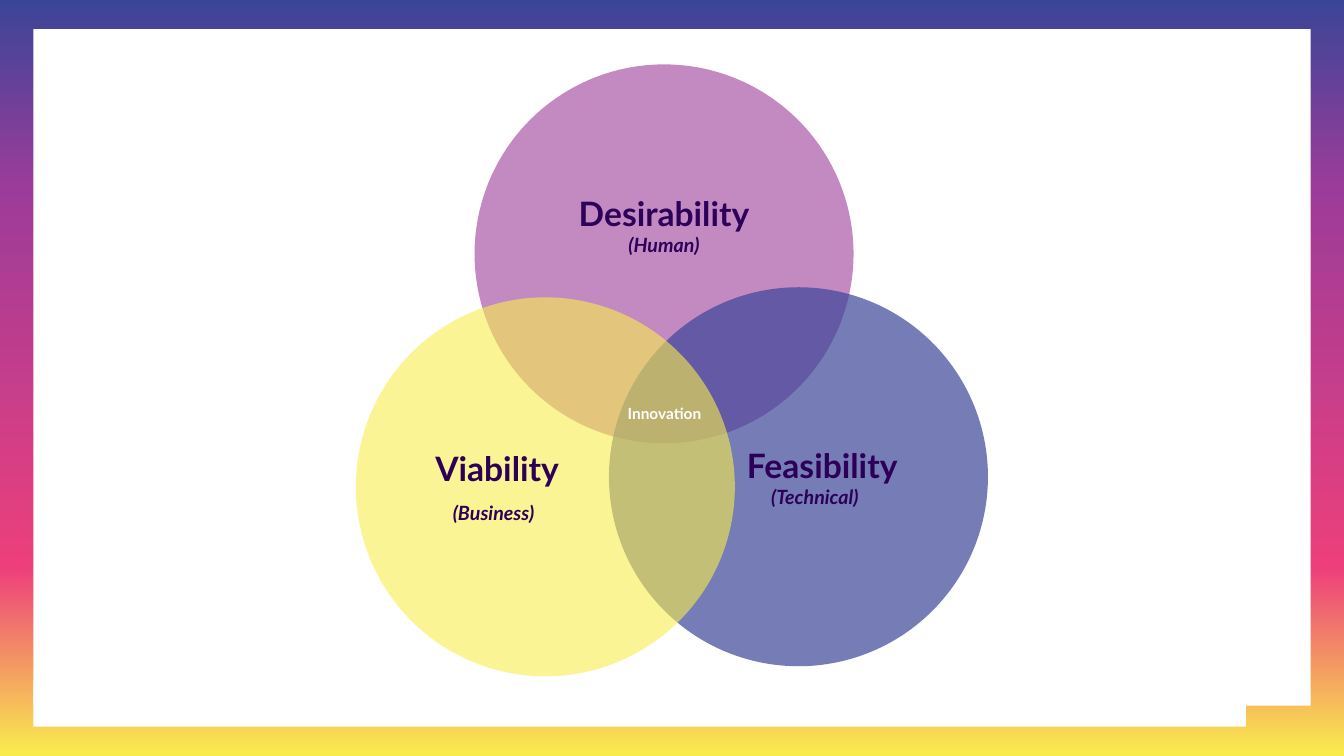
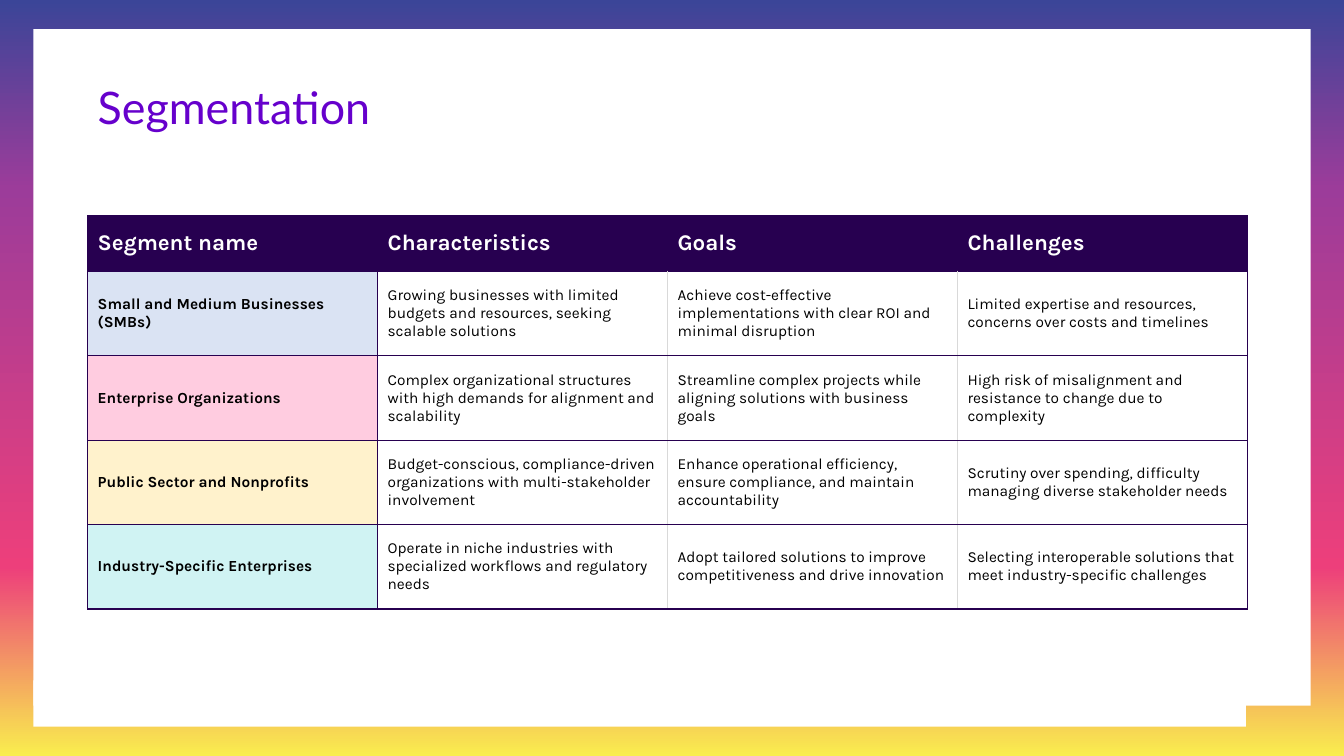
from copy import deepcopy

from lxml import etree
from pptx import Presentation
from pptx.dml.color import RGBColor
from pptx.enum import shapes, text
from pptx.oxml.ns import qn
from pptx.util import Pt

# Shared style
HEADING_FONT, TABLE_FONT = "Lato", "Karla"
WHITE, BLACK, INK = "FFFFFF", "000000", "2C0058"
BLUE, PURPLE, PINK, YELLOW = "3B4598", "9C3C9A", "ED3F7B", "F9ED4E"
TABLE_DARK, TABLE_LIGHT = "270050", "D9D9D9"
TITLE_STOPS = [(0, "6600CC"), (1, "3965B5")]
FRAME_STOPS = [(0, BLUE), (0.25, PURPLE), (0.75, PINK), (1, YELLOW)]
WIDTH, HEIGHT = 960, 540

# Circles: left, top, colour, opacity, bottom inset, alignment,
# lines of (text, size, italic, indent, exact spacing)
DIAMETER = 270.7
CENTER, LEFT = text.PP_ALIGN.CENTER, text.PP_ALIGN.LEFT
CIRCLES = [
    (339, 46, PURPLE, 60, 45, CENTER,
     [("Desirability", 24, False, 0, None), ("(Human)", 14, True, 0, None)]),
    (435, 205.2, BLUE, 70, 3.6, CENTER,
     [("Feasibility", 24, False, 34, None), ("(Technical)", 14, True, 23.5, None)]),
    (254.2, 212.4, YELLOW, 60, 3.6, LEFT,
     [("Viability", 24, False, 10, 28), ("(Business)", 14, True, 22.5, 26)]),
]

SEGMENT_FILLS = ["DAE3F3", "FFCCE0", "FFF2CC", "D0F3F3"]
SEGMENTS = [
    ("Segment name", "Characteristics", "Goals", "Challenges"),
    ("Small and Medium Businesses (SMBs)",
     "Growing businesses with limited budgets and resources, seeking scalable solutions",
     "Achieve cost-effective implementations with clear ROI and minimal disruption",
     "Limited expertise and resources, concerns over costs and timelines"),
    ("Enterprise Organizations",
     "Complex organizational structures with high demands for alignment and scalability",
     "Streamline complex projects while aligning solutions with business goals",
     "High risk of misalignment and resistance to change due to complexity"),
    ("Public Sector and Nonprofits",
     "Budget-conscious, compliance-driven organizations with multi-stakeholder involvement",
     "Enhance operational efficiency, ensure compliance, and maintain accountability",
     "Scrutiny over spending, difficulty managing diverse stakeholder needs"),
    ("Industry-Specific Enterprises",
     "Operate in niche industries with specialized workflows and regulatory needs",
     "Adopt tailored solutions to improve competitiveness and drive innovation",
     "Selecting interoperable solutions that meet industry-specific challenges"),
]


def color(value):
    return RGBColor.from_string(value)


def fill_solid(fill, value):
    fill.solid()
    fill.fore_color.rgb = color(value)


def fill_gradient(fill, element, stops, angle):
    fill.gradient()
    fill.gradient_angle = angle
    stop_list = element.find(".//" + qn("a:gsLst"))
    while len(stop_list) < len(stops):
        stop_list.append(deepcopy(stop_list[-1]))
    for stop, (position, value) in zip(fill.gradient_stops, stops):
        stop.position = position
        stop.color.rgb = color(value)


def add_run(paragraph, words, size, font, value, bold=False, italic=False):
    run = paragraph.add_run()
    run.text = words
    run.font.name, run.font.size = font, Pt(size)
    run.font.bold, run.font.italic = bold, italic
    run.font.color.rgb = color(value)
    return run


def add_plain_shape(slide, kind, left, top, width, height):
    shape = slide.shapes.add_shape(kind, Pt(left), Pt(top), Pt(width), Pt(height))
    shape.shadow.inherit = False
    shape.line.fill.background()
    return shape


def move_frame_to_master(presentation, slide):
    """Gradient border around a white stepped panel, shared by all slides."""
    kind = shapes.MSO_SHAPE.RECTANGLE
    border = add_plain_shape(slide, kind, 0, 0, WIDTH, HEIGHT)
    fill_gradient(border.fill, border.element, FRAME_STOPS, 270)
    panel = add_plain_shape(slide, kind, 23.8, 20.9, 912.4, 483.1)
    step = add_plain_shape(slide, kind, 23.8, 486, 866.2, 33.1)
    for shape in (panel, step):
        fill_solid(shape.fill, WHITE)
    tree = presentation.slide_master.shapes.element
    for index, shape in enumerate((border, panel, step)):
        shape.element.nvSpPr.cNvPr.set("id", str(100 + index))
        tree.insert(2 + index, shape.element)


def add_circle(slide, left, top, value, opacity, bottom_inset, alignment, lines):
    circle = add_plain_shape(slide, shapes.MSO_SHAPE.OVAL, left, top, DIAMETER, DIAMETER)
    fill_solid(circle.fill, value)
    fill_color = circle.element.spPr.find(".//" + qn("a:srgbClr"))
    etree.SubElement(fill_color, qn("a:alpha"), val=str(opacity * 1000))
    frame = circle.text_frame
    frame.word_wrap = True
    frame.vertical_anchor = text.MSO_ANCHOR.MIDDLE
    frame.margin_bottom = Pt(bottom_inset)
    for index, (words, size, italic, indent, spacing) in enumerate(lines):
        paragraph = frame.add_paragraph() if index else frame.paragraphs[0]
        paragraph.alignment = alignment
        if spacing:
            paragraph.line_spacing = Pt(spacing)
        paragraph._p.get_or_add_pPr().set("marL", str(Pt(indent)))
        add_run(paragraph, words, size, HEADING_FONT, INK, True, italic)


def add_label(slide, words, left, top, width, height):
    box = slide.shapes.add_textbox(Pt(left), Pt(top), Pt(width), Pt(height))
    box.text_frame.word_wrap = True
    add_run(box.text_frame.paragraphs[0], words, 11, HEADING_FONT, WHITE, True)


def set_title(slide, words):
    title = slide.shapes.title
    title.left, title.top, title.width, title.height = Pt(62.6), Pt(53.3), Pt(711.4), Pt(46)
    frame = title.text_frame
    frame.word_wrap = True
    frame.auto_size = text.MSO_AUTO_SIZE.NONE
    frame.vertical_anchor = text.MSO_ANCHOR.TOP
    paragraph = frame.paragraphs[0]
    paragraph.alignment = LEFT
    run = add_run(paragraph, words, 32, HEADING_FONT, TITLE_STOPS[0][1])
    fill_gradient(run.font.fill, title.element, TITLE_STOPS, 180)


def set_borders(cell, left, right):
    properties = cell._tc.get_or_add_tcPr()
    sides = {"L": left, "R": right, "T": TABLE_DARK, "B": TABLE_DARK}
    for index, (side, value) in enumerate(sides.items()):
        line = etree.Element(qn("a:ln" + side), w=str(Pt(1)))
        fill = etree.SubElement(line, qn("a:solidFill"))
        etree.SubElement(fill, qn("a:srgbClr"), val=value)
        properties.insert(index, line)


def style_cell(cell, words, row, column, last_column):
    header, label = row == 0, column == 0
    if header:
        background = TABLE_DARK
    else:
        background = SEGMENT_FILLS[row - 1] if label else WHITE
    fill_solid(cell.fill, background)
    cell.vertical_anchor = text.MSO_ANCHOR.MIDDLE
    add_run(cell.text_frame.paragraphs[0], words, 16 if header else 11, TABLE_FONT,
            WHITE if header else BLACK, header or label)
    # Only the rules between the body's text columns are light
    left = TABLE_LIGHT if not header and column > 1 else TABLE_DARK
    right = TABLE_LIGHT if not header and 0 < column < last_column else TABLE_DARK
    set_borders(cell, left, right)


def add_segment_table(slide, rows, left, top, column_width, header_height, row_height):
    columns = len(rows[0])
    height = header_height + row_height * (len(rows) - 1)
    table = slide.shapes.add_table(len(rows), columns, Pt(left), Pt(top),
                                   Pt(column_width * columns), Pt(height)).table
    for column in table.columns:
        column.width = Pt(column_width)
    for row, values in enumerate(rows):
        table.rows[row].height = Pt(row_height if row else header_height)
        for column, words in enumerate(values):
            style_cell(table.cell(row, column), words, row, column, columns - 1)


def main():
    presentation = Presentation()
    presentation.slide_width, presentation.slide_height = Pt(WIDTH), Pt(HEIGHT)
    title_only, blank = presentation.slide_layouts[5], presentation.slide_layouts[6]

    # Innovation diagram
    slide = presentation.slides.add_slide(blank)
    move_frame_to_master(presentation, slide)
    for circle in CIRCLES:
        add_circle(slide, *circle)
    add_label(slide, "Innovation", 441.2, 285, 80.6, 20.6)

    # Segmentation table
    slide = presentation.slides.add_slide(title_only)
    set_title(slide, "Segmentation")
    add_segment_table(slide, SEGMENTS, 62.6, 154, 207.1, 39.8, 60.3)

    presentation.save("out.pptx")


if __name__ == "__main__":
    main()
